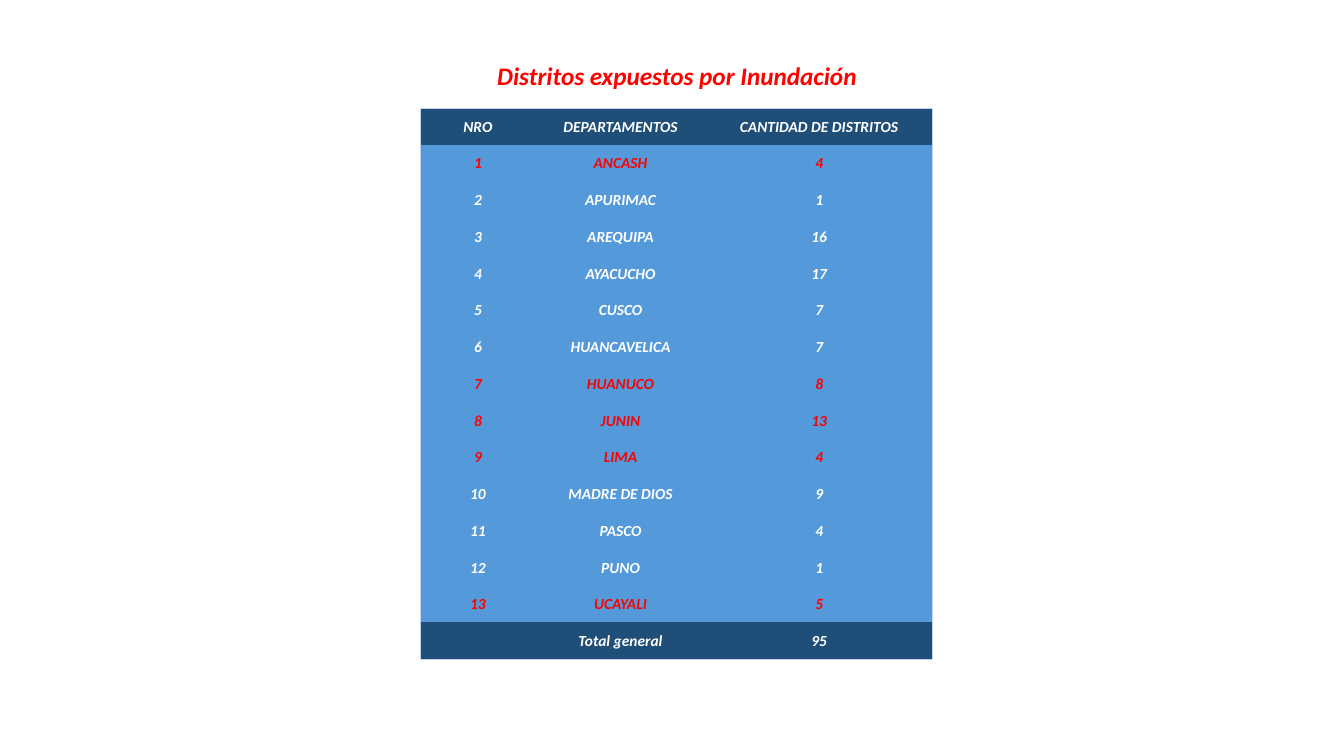
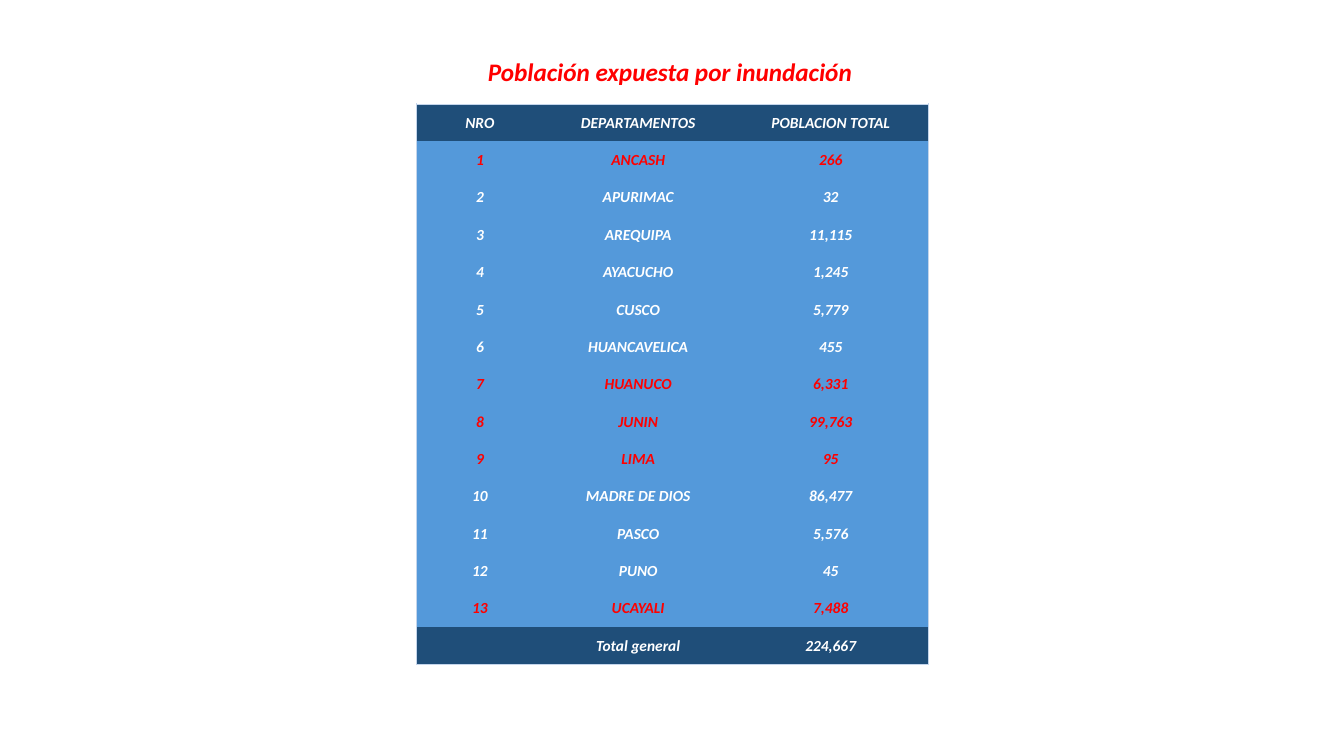
from lxml.etree import SubElement as Sub
from pptx import Presentation
from pptx.dml.color import RGBColor as Rgb
from pptx.enum.text import MSO_ANCHOR as Anchor, PP_ALIGN as Align
from pptx.oxml.ns import qn
from pptx.util import Inches, Pt

FONT = "Calibri"
RED, WHITE = "FF0000", "FFFFFF"
NAVY, BLUE, EDGE = "1F4E79", "5499DA", "C4D5EB"
AREAS = ["ANCASH", "APURIMAC", "AREQUIPA", "AYACUCHO", "CUSCO",
         "HUANCAVELICA", "HUANUCO", "JUNIN", "LIMA", "MADRE DE DIOS",
         "PASCO", "PUNO", "UCAYALI"]
MARKED = {"ANCASH", "HUANUCO", "JUNIN", "LIMA", "UCAYALI"}
SLIDES = [
    {"title": "Distritos expuestos por Inundación",
     "title_box": (4.81, 0.55, 3.81, 0.4),
     "grid_box": (4.17, 1.07, 5.08, 5.47),
     "widths": (1.14, 1.69, 2.25),
     "head": "CANTIDAD DE DISTRITOS",
     "counts": ["4", "1", "16", "17", "7", "7", "8", "13", "4", "9", "4",
                "1", "5"],
     "total": "95"},
    {"title": "Población expuesta por inundación",
     "title_box": (4.72, 0.51, 3.85, 0.4),
     "grid_box": (4.13, 1.03, 5.08, 5.56),
     "widths": (1.26, 1.88, 1.94),
     "head": "POBLACION TOTAL",
     "counts": ["266", "32", "11,115", "1,245", "5,779", "455", "6,331",
                "99,763", "95", "86,477", "5,576", "45", "7,488"],
     "total": "224,667"},
]


def color(code):
    """Turn a hex string into a colour."""
    return Rgb.from_string(code)


def write(frame, text, size, code):
    """Write one centred line in bold italics."""
    line = frame.paragraphs[0]
    line.text = text
    line.alignment = Align.CENTER
    font = line.font
    font.name, font.size = FONT, Pt(size)
    font.bold = font.italic = True
    font.color.rgb = color(code)


def add_title(slide, text, box):
    """Add the red title above the table."""
    frame = slide.shapes.add_textbox(*map(Inches, box)).text_frame
    frame.word_wrap = False
    write(frame, text, 18, RED)


def add_edges(cell, outer):
    """Draw the outer edges of a cell and clear the inner ones."""
    props = cell._tc.get_or_add_tcPr()
    for side in "LRTB":
        line = Sub(props, qn(f"a:ln{side}"), w=str(Pt(0.5)))
        if side in outer:
            fill = Sub(line, qn("a:solidFill"))
            Sub(fill, qn("a:srgbClr"), val=EDGE)
        else:
            Sub(line, qn("a:noFill"))


def style_cell(cell, text, ink, back, outer):
    """Fill, frame and write one cell."""
    add_edges(cell, outer)
    cell.fill.solid()
    cell.fill.fore_color.rgb = color(back)
    cell.vertical_anchor = Anchor.MIDDLE
    cell.margin_left = cell.margin_right = cell.margin_top = Inches(0.01)
    cell.margin_bottom = 0
    write(cell.text_frame, text, 11, ink)


def add_grid(slide, rows, box, widths):
    """Add the table with dark first and last rows."""
    last_row, last_col = len(rows) - 1, len(widths) - 1
    grid = slide.shapes.add_table(
        len(rows), len(widths), *map(Inches, box)).table
    grid.first_row = grid.horz_banding = False
    for col, width in zip(grid.columns, widths):
        col.width = Inches(width)
    for r, texts in enumerate(rows):
        grid.rows[r].height = Inches(box[3] / len(rows))
        back = NAVY if r in (0, last_row) else BLUE
        ink = RED if texts[1] in MARKED else WHITE
        for c, text in enumerate(texts):
            tests = {"L": c == 0, "R": c == last_col,
                     "T": r == 0, "B": r == last_row}
            outer = [side for side, hit in tests.items() if hit]
            style_cell(grid.cell(r, c), text, ink, back, outer)


def add_page(deck, data):
    """Add one slide with its title and table."""
    slide = deck.slides.add_slide(deck.slide_layouts[6])
    add_title(slide, data["title"], data["title_box"])
    body = [(str(i), area, count) for i, (area, count)
            in enumerate(zip(AREAS, data["counts"]), 1)]
    rows = [("NRO", "DEPARTAMENTOS", data["head"]), *body,
            ("", "Total general", data["total"])]
    add_grid(slide, rows, data["grid_box"], data["widths"])


def main():
    """Build and save the deck."""
    deck = Presentation()
    deck.slide_width, deck.slide_height = Inches(13.33), Inches(7.5)
    for data in SLIDES:
        add_page(deck, data)
    deck.save("out.pptx")


if __name__ == "__main__":
    main()
